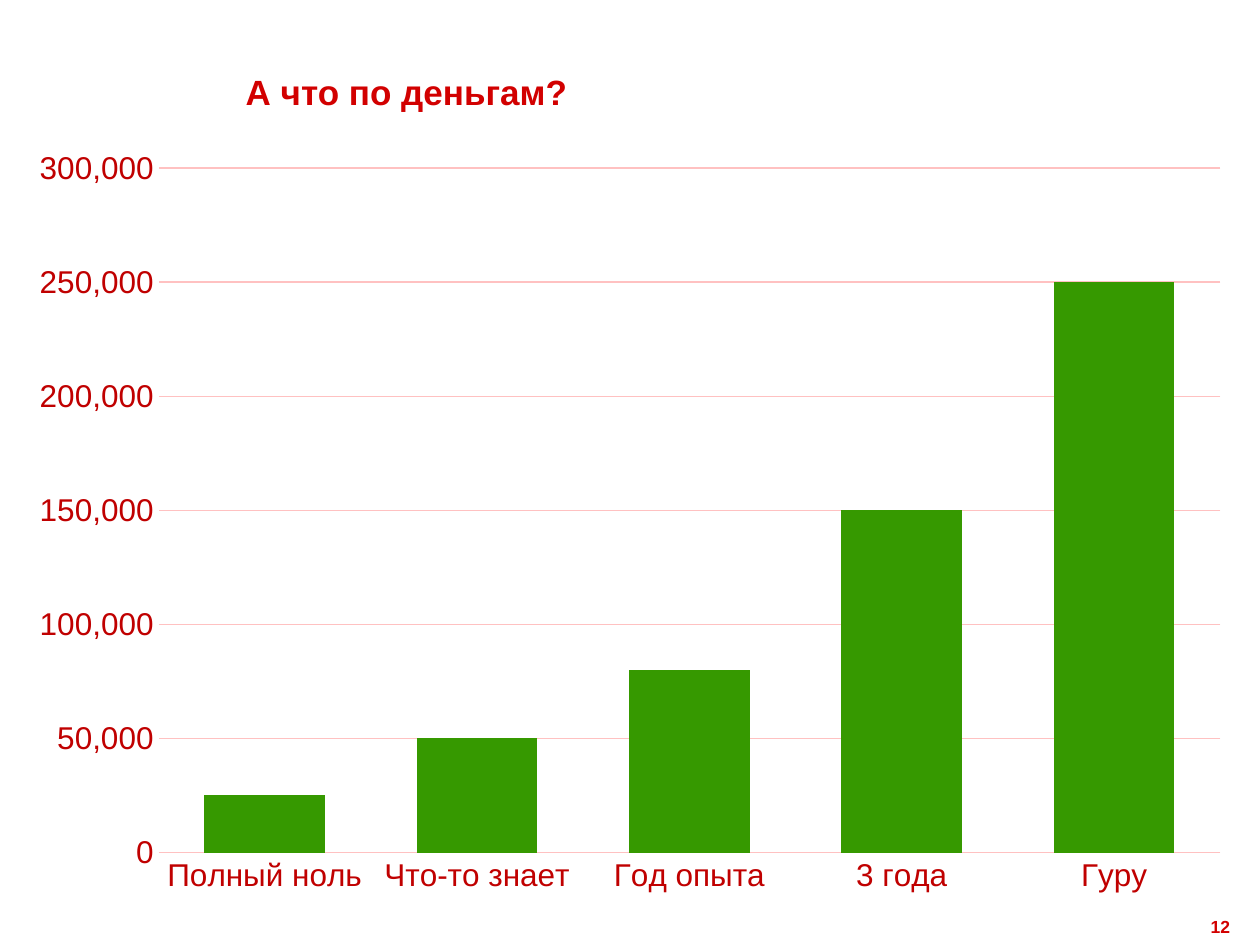
from pptx import Presentation
from pptx.chart.data import CategoryChartData
from pptx.dml.color import RGBColor
from pptx.enum.chart import XL_CHART_TYPE, XL_TICK_MARK
from pptx.enum.text import MSO_ANCHOR, PP_ALIGN
from pptx.util import Pt

FACE = "Arial"
RED, DARK, DEEP = "D20000", "C00000", "5F0000"
PINK, GREEN = "FFC1C1", "369900"


def color(code):
    return RGBColor.from_string(code)


def style(font, size, code, bold=False):
    font.name, font.size, font.bold = FACE, Pt(size), bold
    font.color.rgb = color(code)


def write(frame, text, size=10, code=RED, bold=True, align=PP_ALIGN.LEFT,
          anchor=MSO_ANCHOR.TOP, space=1.0):
    frame.word_wrap = True
    frame.vertical_anchor = anchor
    par = frame.paragraphs[0]
    par.alignment, par.line_spacing = align, space
    run = par.add_run()
    run.text = text
    style(run.font, size, code, bold)


def rule(line):
    line.color.rgb = color(PINK)
    line.width = Pt(0.75)


class Deck:
    def __init__(self, wide, high):
        self.file = Presentation()
        self.file.slide_width, self.file.slide_height = Pt(wide), Pt(high)
        self.slide = self.file.slides.add_slide(self.file.slide_layouts[5])

    def title(self, text, left, top, wide, high):
        box = self.slide.shapes.title
        box.left, box.top, box.width, box.height = map(Pt, (left, top, wide, high))
        write(box.text_frame, text, size=20, anchor=MSO_ANCHOR.MIDDLE, space=0.8)

    def label(self, text, left, top, wide, high, **form):
        box = self.slide.shapes.add_textbox(*map(Pt, (left, top, wide, high)))
        write(box.text_frame, text, **form)

    def columns(self, name, pay, left, top, wide, high):
        data = CategoryChartData(number_format="#,##0")
        data.categories = list(pay)
        data.add_series(name, list(pay.values()))
        chart = self.slide.shapes.add_chart(
            XL_CHART_TYPE.COLUMN_CLUSTERED,
            *map(Pt, (left, top, wide, high)), data).chart
        chart.has_legend = chart.has_title = False
        style(chart.font, 10, DEEP)

        # Bars
        plot = chart.plots[0]
        plot.gap_width, plot.overlap = 76, -27
        plot.vary_by_categories = False
        fill = plot.series[0].format.fill
        fill.solid()
        fill.fore_color.rgb = color(GREEN)

        # Axes and grid
        for axis in (chart.category_axis, chart.value_axis):
            axis.major_tick_mark = axis.minor_tick_mark = XL_TICK_MARK.NONE
            style(axis.tick_labels.font, 18, DARK)
        rule(chart.category_axis.format.line)
        scale = chart.value_axis
        scale.minimum_scale, scale.maximum_scale = 0, 300000
        scale.major_unit = 50000
        scale.tick_labels.number_format = "#,##0"
        scale.tick_labels.number_format_is_linked = False
        scale.format.line.fill.background()
        scale.has_major_gridlines = True
        rule(scale.major_gridlines.format.line)

    def save(self):
        self.file.save("out.pptx")


def main():
    deck = Deck(720, 540)
    deck.title("А что по деньгам?", 133.2, 12.24, 380.16, 84.96)

    # Pay by level of skill
    pay = {"Полный ноль": 25000, "Что-то знает": 50000, "Год опыта": 80000,
           "3 года": 150000, "Гуру": 250000}
    deck.columns("Series 1", pay, 8.64, 77.04, 702.72, 442.08)

    # Page number
    deck.label("12", 649.44, 519.84, 60.48, 20.16, align=PP_ALIGN.RIGHT)
    deck.save()


if __name__ == "__main__":
    main()
